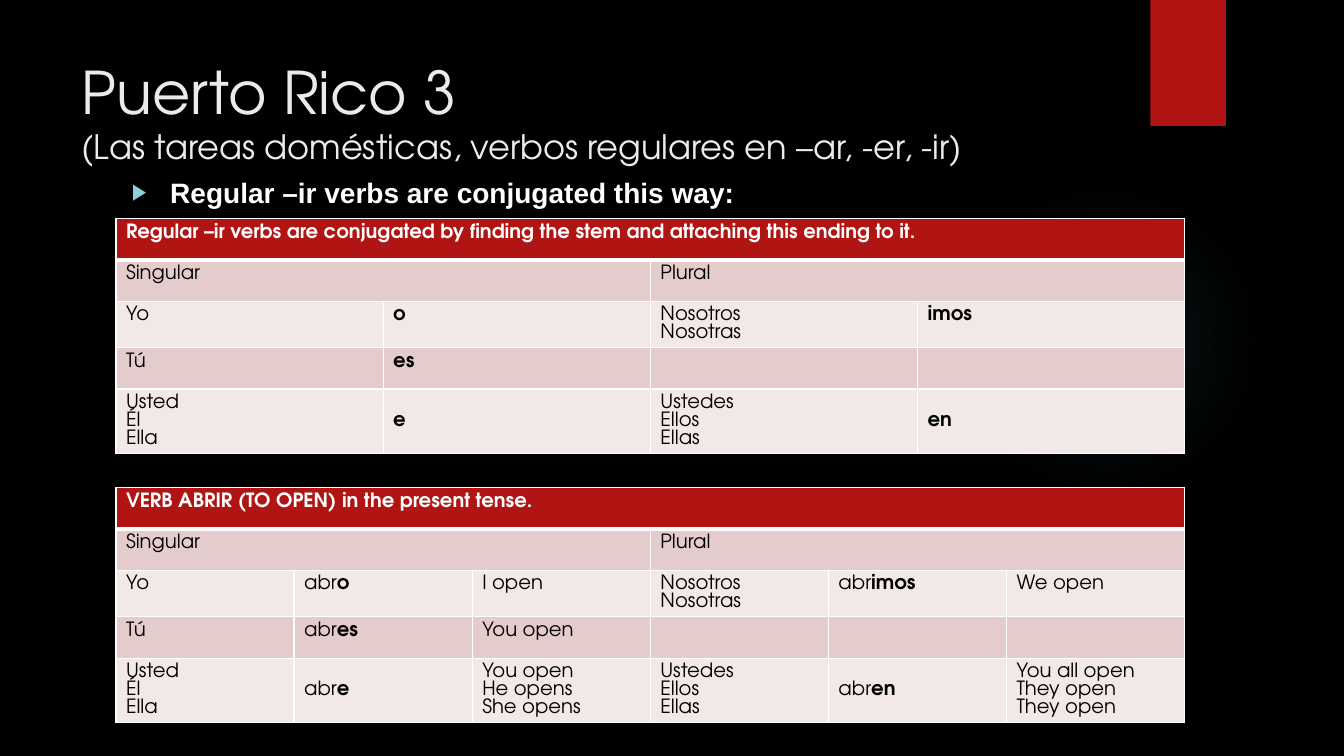
"""Build the slide on regular Spanish -ir verbs."""
from dataclasses import dataclass

from lxml import etree
from pptx import Presentation
from pptx import util as u
from pptx.dml.color import RGBColor
from pptx.enum import shapes, text
from pptx.oxml import parse_xml
from pptx.oxml.ns import nsdecls, qn

PX = 9144


@dataclass(frozen=True)
class Theme:
    """Fonts, colours and type sizes."""
    heading_font: str = "TeX Gyre Adventor"
    body_font: str = "Arial"
    background: str = "000000"
    title: str = "EBEBEB"
    light: str = "FFFFFF"
    dark: str = "000000"
    accent: str = "B01513"
    band: str = "E4CCCC"
    pale: str = "F2E8E7"
    bullet: str = "8AD0D6"
    glow: str = "50B9C1"
    title_size: float = 42
    subtitle_size: float = 24
    lead_size: float = 20
    cell_size: float = 14
    cell_leading: float = 12.9


@dataclass(frozen=True)
class Box:
    """A rectangle in px."""
    left: int
    top: int
    width: int
    height: int

    def emu(self) -> tuple[int, ...]:
        """Return the rectangle in EMU."""
        return tuple(v * PX for v in (self.left, self.top, self.width, self.height))


@dataclass(frozen=True)
class Conjugation:
    """A verb table; a bar in a cell marks the start of the bold ending."""
    top: int
    heading: str
    rows: tuple[tuple[str, ...], ...]


THEME = Theme()
TABLE_LEFT, TABLE_WIDTH = 115, 1060
ROW_HEIGHTS = (41, 41, 46, 41, 64)
ROW_FILLS = (THEME.accent, THEME.band, THEME.pale, THEME.band, THEME.pale)
CONJUGATIONS = (
    Conjugation(484, "VERB ABRIR (TO OPEN) in the present tense.", (
        ("Yo", "abr|o", "I open", "Nosotros\nNosotras", "abr|imos", "We open"),
        ("Tú", "abr|es", "You open", "", "", ""),
        ("Usted\nÉl\nElla", "abr|e", "You open\nHe opens\nShe opens",
         "Ustedes\nEllos\nEllas", "abr|en", "You all open\nThey open\nThey open"),
    )),
    Conjugation(217, "Regular –ir verbs are conjugated by finding the stem "
                     "and attaching this ending to it.", (
        ("Yo", "|o", "Nosotros\nNosotras", "|imos"),
        ("Tú", "|es", "", ""),
        ("Usted\nÉl\nElla", "|e", "Ustedes\nEllos\nEllas", "|en"),
    )),
)


def style(font, name: str, size: float, colour: str, bold: bool = False) -> None:
    """Set a font's face, size, colour and weight."""
    font.name, font.size, font.bold = name, u.Pt(size), bold
    font.color.rgb = RGBColor.from_string(colour)


def add_block(slide, kind, box: Box, colour: str):
    """Add a plain shape without outline or shadow."""
    block = slide.shapes.add_shape(kind, *box.emu())
    block.shadow.inherit = False
    block.line.fill.background()
    block.fill.solid()
    block.fill.fore_color.rgb = RGBColor.from_string(colour)
    return block


def add_glow(slide) -> None:
    """Add the faint round glow at the right."""
    glow = add_block(slide, shapes.MSO_SHAPE.OVAL, Box(941, 183, 308, 308), THEME.glow)
    stops = "".join(
        f'<a:gs pos="{place * 1000}"><a:srgbClr val="{THEME.glow}">'
        f'<a:alpha val="{alpha * 1000}"/></a:srgbClr></a:gs>'
        for place, alpha in ((0, 7), (36, 6), (69, 0), (100, 0)))
    gradient = parse_xml(
        f'<a:gradFill {nsdecls("a")}><a:gsLst>{stops}</a:gsLst><a:path path="circle">'
        '<a:fillToRect l="50000" t="50000" r="50000" b="50000"/></a:path></a:gradFill>')
    properties = glow.element.spPr
    properties.replace(properties.find(qn("a:solidFill")), gradient)


def add_title(slide) -> None:
    """Place and fill the title."""
    title = slide.shapes.title
    title.left, title.top, title.width, title.height = Box(71, 50, 1029, 153).emu()
    frame = title.text_frame
    frame.auto_size = text.MSO_AUTO_SIZE.NONE
    frame.vertical_anchor = text.MSO_ANCHOR.TOP
    paragraph = frame.paragraphs[0]
    paragraph.alignment = text.PP_ALIGN.LEFT
    topic = paragraph.add_run()
    topic.text = "Puerto Rico 3"
    style(topic.font, THEME.heading_font, THEME.title_size, THEME.title)
    paragraph.add_line_break()
    subtitle = paragraph.add_run()
    subtitle.text = "(Las tareas domésticas, verbos regulares en –ar, -er, -ir)"
    style(subtitle.font, THEME.heading_font, THEME.subtitle_size, THEME.title)


def add_lead(slide) -> None:
    """Add the bulleted lead sentence."""
    frame = slide.shapes.add_textbox(*Box(121, 169, 978, 481).emu()).text_frame
    frame.word_wrap = True
    paragraph = frame.paragraphs[0]
    paragraph.text = "Regular –ir verbs are conjugated this way:"
    properties = paragraph._p.get_or_add_pPr()
    properties.set("marL", str(38 * PX))
    properties.set("indent", str(-38 * PX))
    colour = etree.SubElement(properties, qn("a:buClr"))
    etree.SubElement(colour, qn("a:srgbClr"), val=THEME.bullet)
    etree.SubElement(properties, qn("a:buSzPct"), val="80000")
    etree.SubElement(properties, qn("a:buFont"), typeface=THEME.body_font)
    etree.SubElement(properties, qn("a:buChar"), char="▶")
    style(paragraph.font, THEME.body_font, THEME.lead_size, THEME.light, True)


def format_cell(cell, row: int) -> None:
    """Fill a cell and draw its borders."""
    cell.fill.solid()
    cell.fill.fore_color.rgb = RGBColor.from_string(ROW_FILLS[row])
    properties = cell._tc.get_or_add_tcPr()
    widths = {"lnL": 1, "lnR": 1, "lnT": 3 if row == 1 else 1, "lnB": 3 if row == 0 else 1}
    for place, (side, width) in enumerate(widths.items()):
        properties.insert(place, parse_xml(
            f'<a:{side} {nsdecls("a")} w="{u.Pt(width)}"><a:solidFill>'
            f'<a:srgbClr val="{THEME.light}"/></a:solidFill></a:{side}>'))


def write_cell(cell, content: str, heading: bool = False) -> None:
    """Write a cell's lines, with endings in bold."""
    if "|" in content:
        cell.vertical_anchor = text.MSO_ANCHOR.MIDDLE
    frame = cell.text_frame
    for number, line in enumerate(content.split("\n")):
        paragraph = frame.add_paragraph() if number else frame.paragraphs[0]
        stem, _, ending = line.partition("|")
        paragraph.line_spacing = u.Pt(THEME.cell_leading)
        style(paragraph.font, THEME.heading_font, THEME.cell_size,
              THEME.light if heading else THEME.dark, heading or bool(ending and not stem))
        for part in filter(None, (stem, ending)):
            paragraph.add_run().text = part
        if stem and ending:
            paragraph.runs[1].font.bold = True


def add_conjugation(slide, verb: Conjugation) -> None:
    """Add one conjugation table."""
    count = len(verb.rows[0])
    half = count // 2
    box = Box(TABLE_LEFT, verb.top, TABLE_WIDTH, sum(ROW_HEIGHTS))
    table = slide.shapes.add_table(len(ROW_HEIGHTS), count, *box.emu()).table
    table.horz_banding = False
    for column in table.columns:
        column.width = TABLE_WIDTH * PX // count
    for number, height in enumerate(ROW_HEIGHTS):
        table.rows[number].height = height * PX
        for column in range(count):
            format_cell(table.cell(number, column), number)
    table.cell(0, 0).merge(table.cell(0, count - 1))
    write_cell(table.cell(0, 0), verb.heading, heading=True)
    for start, label in ((0, "Singular"), (half, "Plural")):
        table.cell(1, start).merge(table.cell(1, start + half - 1))
        write_cell(table.cell(1, start), label)
    for number, forms in enumerate(verb.rows, 2):
        for column, form in enumerate(forms):
            cell = table.cell(number, column)
            write_cell(cell, form)
            if number < len(ROW_HEIGHTS) - 1:
                cell.vertical_anchor = text.MSO_ANCHOR.TOP


def main() -> None:
    """Build and save the slide."""
    deck = Presentation()
    deck.slide_width, deck.slide_height = 1333 * PX, 750 * PX
    slide = deck.slides.add_slide(deck.slide_layouts[5])
    slide.background.fill.solid()
    slide.background.fill.fore_color.rgb = RGBColor.from_string(THEME.background)
    add_glow(slide)
    add_block(slide, shapes.MSO_SHAPE.RECTANGLE, Box(1141, 0, 75, 125), THEME.accent)
    add_title(slide)
    add_lead(slide)
    for verb in CONJUGATIONS:
        add_conjugation(slide, verb)
    deck.save("out.pptx")


if __name__ == "__main__":
    main()
